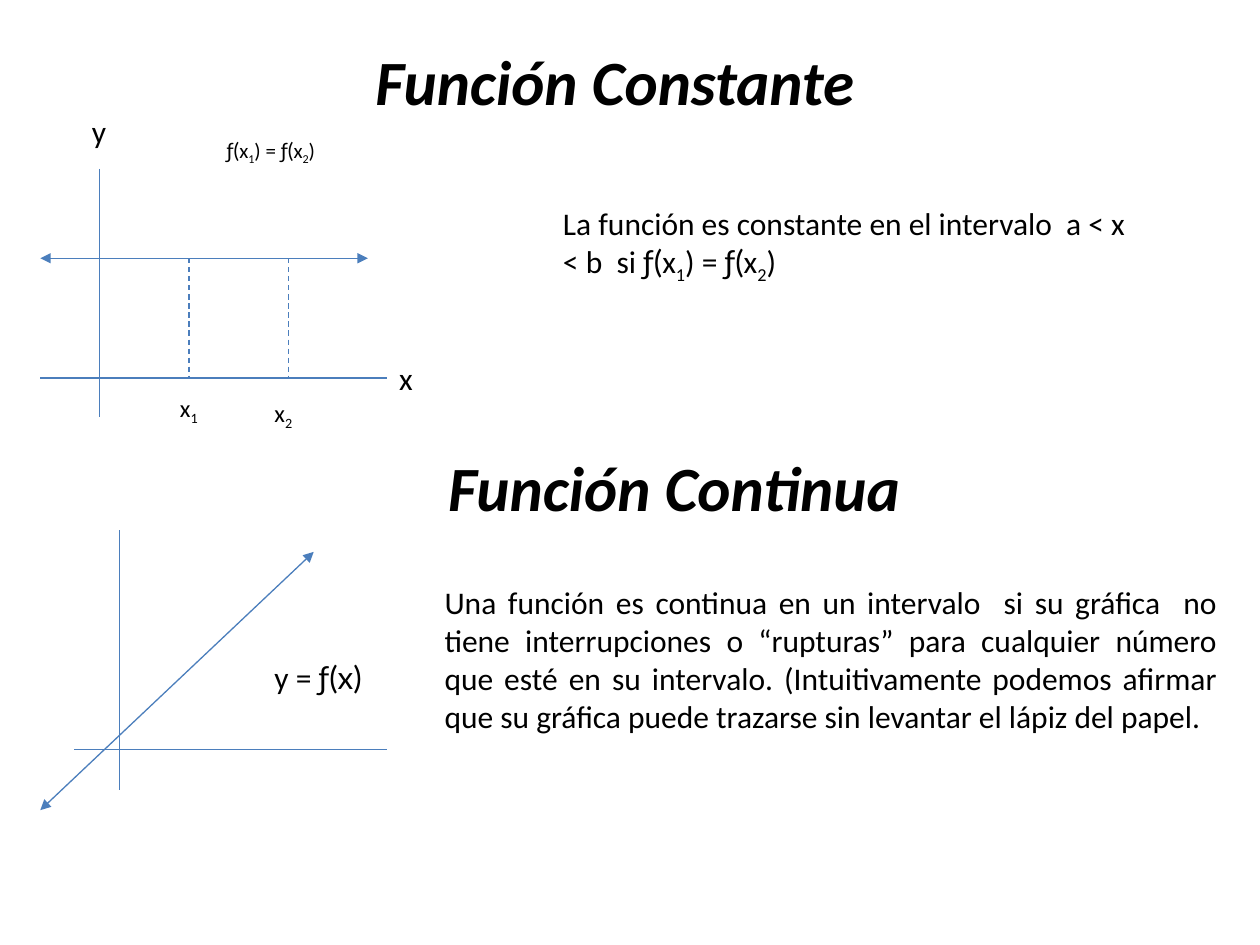
from lxml import etree
from pptx import Presentation
from pptx import util as u
from pptx.dml.color import RGBColor
from pptx.enum import dml, shapes, text
from pptx.oxml import ns

COLORS = {"text": "000000", "line": "4B7EBC"}
BODY_FONT, SYMBOL_FONT = "Calibri", "Lato"

# Each part of a formula is (text, font, is subscript).
EQUAL_VALUES = [
    ("ƒ(", SYMBOL_FONT, False), ("x", BODY_FONT, False), ("1", BODY_FONT, True),
    (") = ", BODY_FONT, False),
    ("ƒ(", SYMBOL_FONT, False), ("x", BODY_FONT, False), ("2", BODY_FONT, True),
    (")", BODY_FONT, False),
]


def plain(words):
    return [(words, BODY_FONT, False)]


def add_text(parent, box, parts, size, align=text.PP_ALIGN.LEFT, emphasis=None):
    """Add a text box; emphasis makes its text bold and italic."""
    shape = parent.shapes.add_textbox(*(u.Inches(value) for value in box))
    text_frame = shape.text_frame
    text_frame.word_wrap = True
    text_frame.auto_size = text.MSO_AUTO_SIZE.SHAPE_TO_FIT_TEXT
    paragraph = text_frame.paragraphs[0]
    paragraph.alignment = align
    for words, font_name, subscript in parts:
        run = paragraph.add_run()
        run.text = words
        run.font.name = font_name
        run.font.size = u.Pt(size)
        run.font.bold = run.font.italic = emphasis
        run.font.color.rgb = RGBColor.from_string(COLORS["text"])
        if subscript:
            run._r.get_or_add_rPr().set("baseline", "-25000")


def add_title(slide, left, top, words):
    add_text(slide, (left, top, 8.58, 0.71), plain(words), 36,
             text.PP_ALIGN.CENTER, emphasis=True)


def add_line(parent, start, end, dashed=False, arrows=False):
    connector = parent.shapes.add_connector(
        shapes.MSO_CONNECTOR.STRAIGHT,
        *(u.Inches(value) for value in (*start, *end)))
    connector.line.color.rgb = RGBColor.from_string(COLORS["line"])
    connector.line.width = u.Pt(0.75)
    if dashed:
        connector.line.dash_style = dml.MSO_LINE.DASH
    if arrows:
        line = connector.line._get_or_add_ln()
        for tag in ("a:headEnd", "a:tailEnd"):
            etree.SubElement(line, ns.qn(tag)).set("type", "triangle")
    etree.SubElement(connector._element.spPr, ns.qn("a:effectLst"))


def add_constant_graph(slide):
    graph = slide.shapes.add_group_shape()
    axis_y, value_y = 3, 2.05
    add_line(graph, (0.79, 1.34), (0.79, 3.31))
    add_line(graph, (0.32, axis_y), (3.07, axis_y))
    add_text(graph, (3.07, 2.8, 0.32, 0.4), plain("x"), 18)
    add_text(graph, (0.63, 0.84, 0.32, 0.4), plain("y"), 18)
    add_line(graph, (0.32, value_y), (2.92, value_y), arrows=True)
    for index, x, left, top in (("1", 1.5, 1.33, 3.07), ("2", 2.29, 2.08, 3.11)):
        add_line(graph, (x, value_y), (x, axis_y), dashed=True)
        add_text(graph, (left, top, 0.41, 0.34),
                 plain("x") + [(index, BODY_FONT, True)], 14)
    add_text(graph, (1.7, 1.04, 1.7, 0.3), EQUAL_VALUES, 12)


def add_continuous_graph(slide):
    graph = slide.shapes.add_group_shape()
    add_line(graph, (0.95, 4.21), (0.95, 6.27))
    add_line(graph, (0.59, 5.95), (3.07, 5.95))
    add_line(graph, (0.32, 6.43), (2.49, 4.38), arrows=True)
    add_text(graph, (2.08, 5.17, 1.58, 0.4),
             plain("y = ") + [("ƒ(x)", SYMBOL_FONT, False)], 18)


def main():
    presentation = Presentation()
    presentation.slide_width = u.Inches(10)
    presentation.slide_height = u.Inches(7.5)
    slide = presentation.slides.add_slide(presentation.slide_layouts[6])

    add_title(slide, 0.59, 0.29, "Función Constante")
    add_constant_graph(slide)
    add_text(slide, (4.37, 1.57, 4.8, 0.71),
             plain("La función es constante en el intervalo  a < x < b  si ")
             + EQUAL_VALUES, 18)

    add_title(slide, 1.06, 3.51, "Función Continua")
    add_text(slide, (3.43, 4.58, 6.33, 1.31),
             plain("Una función es continua en un intervalo  si su gráfica  no tiene "
                   "interrupciones o “rupturas” para cualquier número que esté en su "
                   "intervalo. (Intuitivamente podemos afirmar que su gráfica puede "
                   "trazarse sin levantar el lápiz del papel."),
             18, text.PP_ALIGN.JUSTIFY)
    add_continuous_graph(slide)

    presentation.save("out.pptx")


if __name__ == "__main__":
    main()
